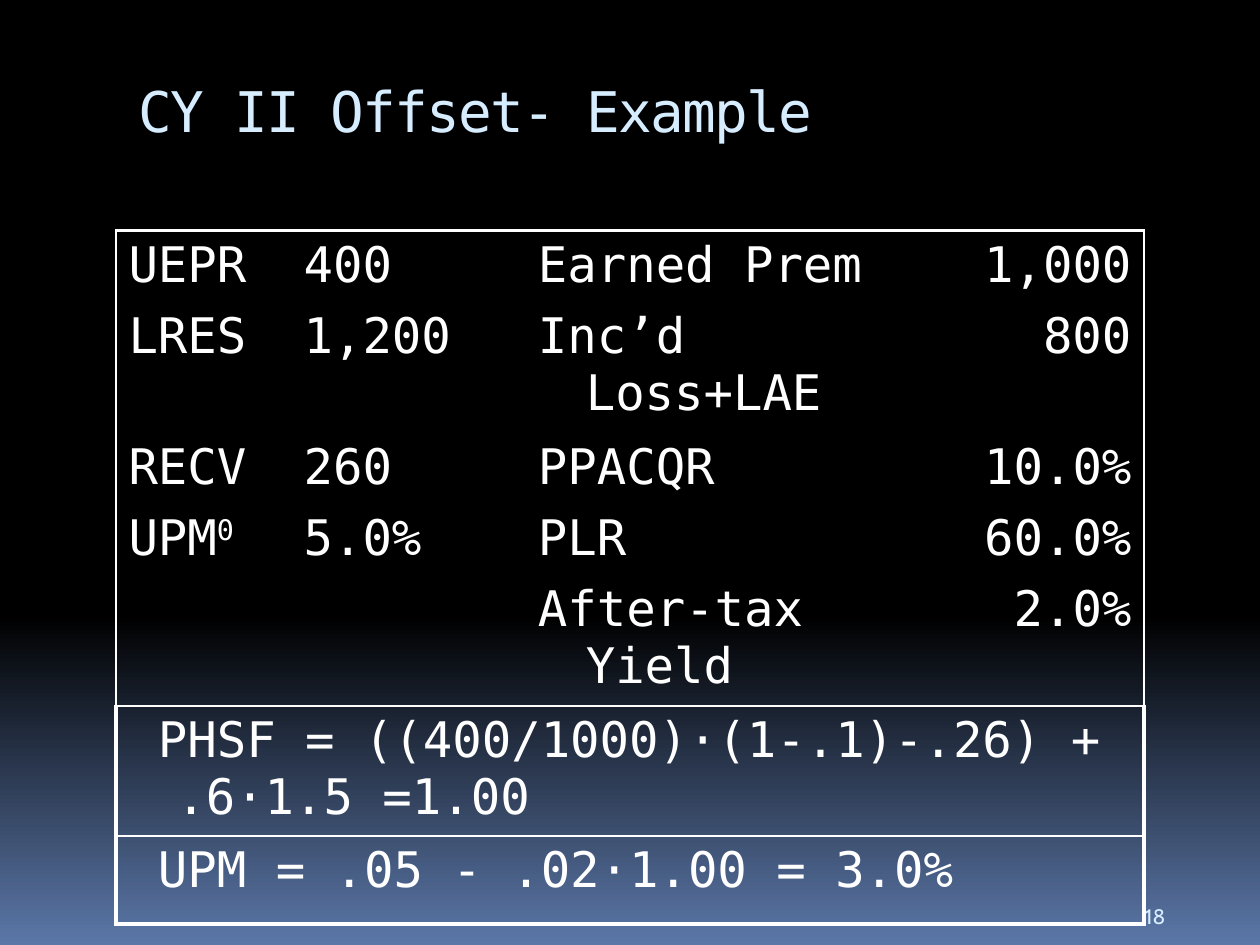
from copy import deepcopy
from lxml.etree import SubElement
from pptx import Presentation
from pptx.dml.color import RGBColor as RGB
from pptx.enum.text import MSO_ANCHOR as Anchor, PP_ALIGN as Align
from pptx.oxml.ns import qn
from pptx.util import Inches, Pt

COLORS = {"top": "000000", "bottom": "5B77A8", "pale": "D6ECFF", "white": "FFFFFF"}
MONO = "DejaVu Sans Mono"
NO_GRID_STYLE = "{2D5ABB26-0587-4C30-8999-92F81FD0307C}"

TITLE = "CY II Offset- Example"
PAGE_NUMBER = "18"
INPUTS = [
    ("UEPR", "400", "", "Earned Prem", "1,000"),
    ("LRES", "1,200", "", "Inc’d Loss+LAE", "800"),
    ("RECV", "260", "", "PPACQR", "10.0%"),
    (("UPM", "0"), "5.0%", "", "PLR", "60.0%"),
    ("", "", "", "After-tax Yield", "2.0%"),
]
FORMULAS = [
    " PHSF = ((400/1000)·(1-.1)-.26) + .6·1.5 =1.00",
    " UPM = .05 - .02·1.00 = 3.0%",
]
COLUMN_WIDTHS = [1.39, 1.61, 0.25, 3.33, 1.58]
ROW_HEIGHTS = [0.56, 0.6, 0.56, 0.56, 0.7, 0.7, 0.7]

TITLE_FORMAT = {"name": MONO, "size": Pt(32), "color": "pale"}
NUMBER_FORMAT = {"name": "Cabin", "size": Pt(12), "color": "pale"}
CELL_FORMAT = {"name": MONO, "size": Pt(28), "color": "white"}


def rgb(name):
    return RGB.from_string(COLORS[name])


def add_run(paragraph, text, text_format):
    run = paragraph.add_run()
    run.text = text
    for key, value in text_format.items():
        if key == "color":
            run.font.color.rgb = rgb(value)
        else:
            setattr(run.font, key, value)
    return run


def add_text(slide, box, text, text_format, anchor):
    frame = slide.shapes.add_textbox(*map(Inches, box)).text_frame
    frame.word_wrap = True
    frame.vertical_anchor = anchor
    return add_run(frame.paragraphs[0], text, text_format)


def paint_background(slide):
    fill = slide.background.fill
    fill.gradient()
    fill.gradient_angle = 270
    for stop, name in zip(fill.gradient_stops, ("top", "bottom")):
        stop.color.rgb = rgb(name)
    first = next(slide.element.iter(qn("a:gs")))
    middle = deepcopy(first)
    middle.set("pos", "65000")
    first.addnext(middle)


def fill_cell(cell, content, align):
    paragraph = cell.text_frame.paragraphs[0]
    paragraph.alignment = align
    properties = paragraph._p.get_or_add_pPr()
    properties.set("marL", str(Inches(0.38)))
    properties.set("indent", str(-Inches(0.38)))
    before = SubElement(properties, qn("a:spcBef"))
    SubElement(before, qn("a:spcPct"), val="20000")
    base, *raised = (content,) if isinstance(content, str) else content
    add_run(paragraph, base, CELL_FORMAT)
    for text in raised:
        run = add_run(paragraph, text, CELL_FORMAT)
        run.font._element.set("baseline", "30000")


def set_borders(cell, widths):
    properties = cell._tc.get_or_add_tcPr()
    for side in "LRTB":
        if side in widths:
            line = SubElement(properties, qn(f"a:ln{side}"), w=str(Pt(widths[side])))
            solid = SubElement(line, qn("a:solidFill"))
            SubElement(solid, qn("a:srgbClr"), val=COLORS["white"])
    cell.fill.background()


def add_example_table(slide):
    row_count, column_count = len(ROW_HEIGHTS), len(COLUMN_WIDTHS)
    frame = slide.shapes.add_table(
        row_count, column_count, Inches(0.92), Inches(1.83),
        Inches(sum(COLUMN_WIDTHS)), Inches(sum(ROW_HEIGHTS)))
    table = frame.table
    table.first_row = table.horz_banding = False
    next(table._tbl.iter(qn("a:tableStyleId"))).text = NO_GRID_STYLE
    for column, width in zip(table.columns, COLUMN_WIDTHS):
        column.width = Inches(width)
    for row, height in zip(table.rows, ROW_HEIGHTS):
        row.height = Inches(height)

    last_row, last_column = len(INPUTS) - 1, column_count - 1
    for i, values in enumerate(INPUTS):
        for j, content in enumerate(values):
            cell = table.cell(i, j)
            if content:
                fill_cell(cell, content, Align.RIGHT if j == last_column else Align.LEFT)
            edges = {"L": j == 0, "R": j == last_column, "T": i == 0, "B": i == last_row}
            set_borders(cell, {side: 1.5 for side, outer in edges.items() if outer})

    rules = [1.5, 1, 2.25]
    for k, formula in enumerate(FORMULAS):
        i = len(INPUTS) + k
        cell = table.cell(i, 0)
        cell.merge(table.cell(i, last_column))
        fill_cell(cell, formula, Align.LEFT)
        for j in range(column_count):
            set_borders(table.cell(i, j),
                        {"L": 2.25, "R": 2.25, "T": rules[k], "B": rules[k + 1]}
                        if j == 0 else {"T": rules[k], "B": rules[k + 1]})


def main():
    presentation = Presentation()
    presentation.slide_width, presentation.slide_height = Inches(10), Inches(7.5)
    slide = presentation.slides.add_slide(presentation.slide_layouts[6])
    paint_background(slide)
    title = add_text(slide, (1, 0.56, 8.5, 1), TITLE, TITLE_FORMAT, Anchor.TOP)
    title.font._element.set("spc", "-100")
    add_text(slide, (8.99, 7.02, 0.59, 0.4), PAGE_NUMBER, NUMBER_FORMAT, Anchor.BOTTOM)
    add_example_table(slide)
    presentation.save("out.pptx")


if __name__ == "__main__":
    main()
